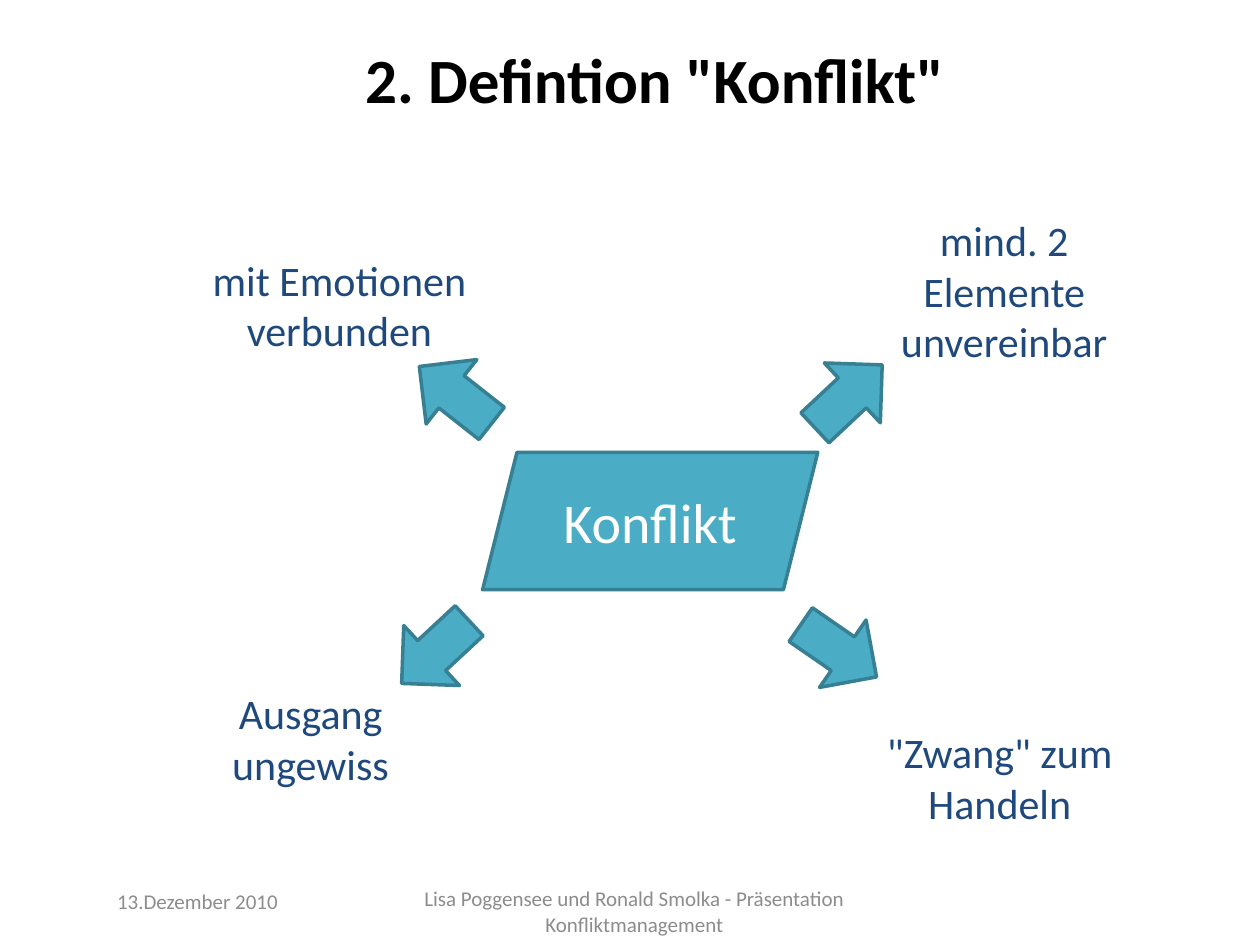
from pptx import Presentation
from pptx.dml.color import RGBColor
from pptx.enum.shapes import MSO_SHAPE
from pptx.enum.text import MSO_ANCHOR, PP_ALIGN
from pptx.util import Pt

COLORS = {
    "title": "000000",
    "shape": "4BACC6",
    "outline": "377F92",
    "center": "FFFFFF",
    "aspect": "1F497D",
    "footer": "8C8C8C",
}
ARROW_SIZE = (46.8, 52.6)
ASPECTS = [
    ("mit Emotionen verbunden", (112.3, 140.4, 163.4, 67.7), (236.9, 199.4), 308.2),
    ("mind. 2 Elemente unvereinbar", (489.6, 123.8, 168.5, 84.2), (461.5, 200.2), 46.9),
    ("Ausgang ungewiss", (95.8, 388.1, 163.4, 67.7), (225.4, 346.3), 227.1),
    ("\"Zwang\" zum Handeln", (489.6, 410.4, 163.4, 67.7), (455.8, 345.6), 124.6),
]


def color(name):
    """Return the named palette colour."""
    return RGBColor.from_string(COLORS[name])


def write(holder, text, size, color_name, align=PP_ALIGN.CENTER, bold=False):
    """Put one formatted, vertically centred paragraph into a shape."""
    frame = holder.text_frame
    frame.word_wrap = True
    frame.vertical_anchor = MSO_ANCHOR.MIDDLE
    frame.text = text
    paragraph = frame.paragraphs[0]
    paragraph.alignment = align
    paragraph.font.name = "Calibri"
    paragraph.font.size = Pt(size)
    paragraph.font.bold = bold
    paragraph.font.color.rgb = color(color_name)


def add_title(slide, text, box):
    """Place and format the title placeholder."""
    title = slide.shapes.title
    title.left, title.top, title.width, title.height = map(Pt, box)
    write(title, text, 36, "title", bold=True)


def add_label(slide, text, box, size, color_name, align=PP_ALIGN.CENTER):
    """Add a text box."""
    label = slide.shapes.add_textbox(*map(Pt, box))
    write(label, text, size, color_name, align)


def add_figure(slide, preset, box, rotation=0):
    """Add a filled and outlined preset shape."""
    figure = slide.shapes.add_shape(preset, *map(Pt, box))
    figure.shadow.inherit = False
    figure.rotation = rotation
    figure.fill.solid()
    figure.fill.fore_color.rgb = color("shape")
    figure.line.color.rgb = color("outline")
    figure.line.width = Pt(2)
    return figure


def main():
    """Build the slide and save it."""
    deck = Presentation()
    deck.slide_width, deck.slide_height = Pt(720), Pt(540)
    slide = deck.slides.add_slide(deck.slide_layouts[5])
    add_title(slide, "2. Defintion \"Konflikt\"", (56.2, 0, 635.8, 90))
    conflict = add_figure(slide, MSO_SHAPE.PARALLELOGRAM, (275.8, 258.5, 191.5, 78.5))
    write(conflict, "Konflikt", 32, "center")
    for aspect, box, arrow_corner, rotation in ASPECTS:
        add_label(slide, aspect, box, 24, "aspect")
        add_figure(slide, MSO_SHAPE.UP_ARROW, arrow_corner + ARROW_SIZE, rotation)
    add_label(slide, "13.Dezember 2010", (59.8, 500.4, 167.8, 28.8), 12, "footer", PP_ALIGN.LEFT)
    add_label(slide, "Lisa Poggensee und Ronald Smolka - Präsentation Konfliktmanagement",
              (224.6, 506.2, 275.8, 28.8), 12, "footer")
    deck.save("out.pptx")


if __name__ == "__main__":
    main()
